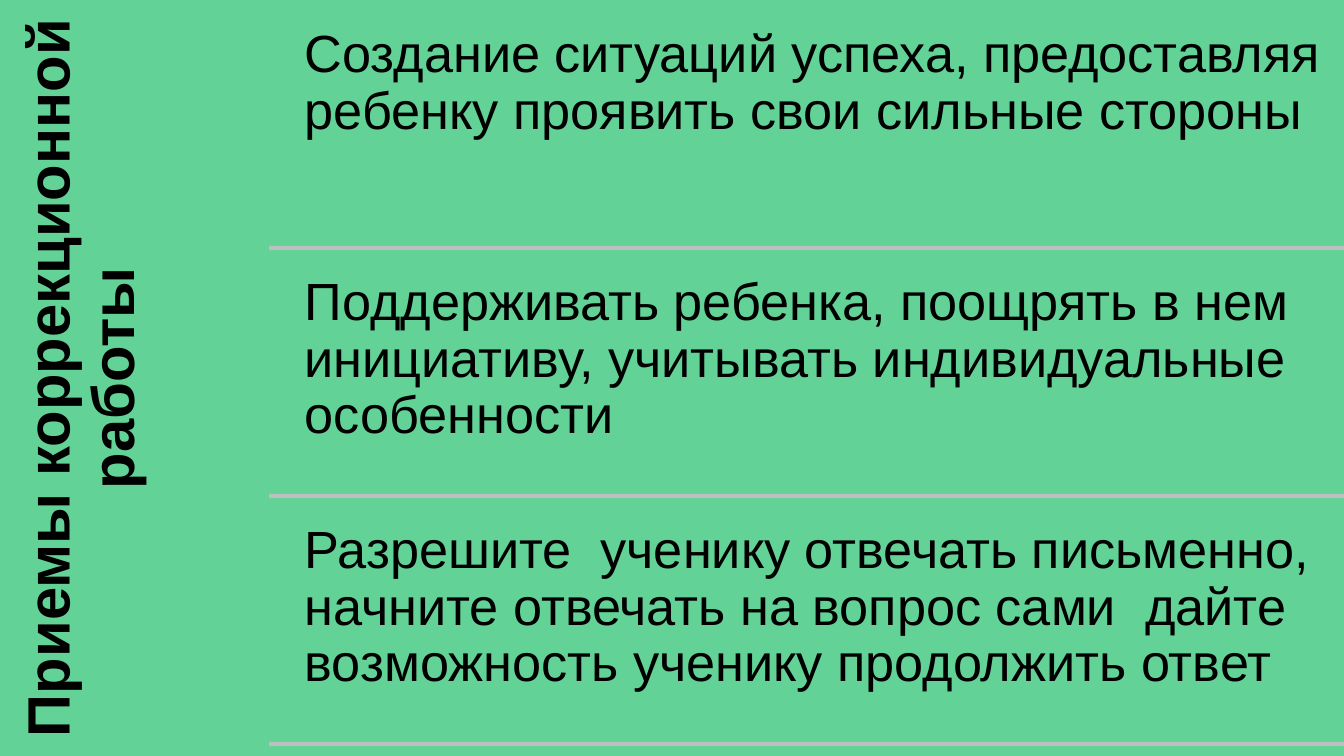
from lxml.etree import SubElement
from pptx import Presentation
from pptx.dml.color import RGBColor
from pptx.enum.shapes import MSO_CONNECTOR
from pptx.enum.text import MSO_ANCHOR, MSO_AUTO_SIZE, PP_ALIGN
from pptx.oxml.ns import qn
from pptx.util import Cm, Pt

COLORS = {"background": "63D297", "text": "000000", "divider": "BFBFC1"}
FONT = "Arial"
SLIDE_WIDTH, SLIDE_HEIGHT = 25.4, 14.29
TITLE_WIDTH = 5.08
TITLE = "Приемы коррекционной работы"
TECHNIQUES = [
    "Создание ситуаций успеха, предоставляя ребенку проявить свои сильные стороны",
    "Поддерживать ребенка, поощрять в нем инициативу, учитывать индивидуальные особенности",
    "Разрешите  ученику отвечать письменно, начните отвечать на вопрос сами  "
    "дайте возможность ученику продолжить ответ",
]


def color(name):
    """Return the named colour of the palette."""
    return RGBColor.from_string(COLORS[name])


def write_text(frame, text, size, margin, bold=False, align=PP_ALIGN.LEFT):
    """Fill a text frame with one top-anchored paragraph."""
    frame.text = text
    frame.word_wrap = True
    frame.auto_size = MSO_AUTO_SIZE.NONE
    frame.vertical_anchor = MSO_ANCHOR.TOP
    frame.margin_left = frame.margin_right = Cm(margin)
    frame.margin_top = frame.margin_bottom = Cm(margin)
    paragraph = frame.paragraphs[0]
    paragraph.alignment = align
    paragraph.line_spacing = 0.9
    paragraph.font.name = FONT
    paragraph.font.size = Pt(size)
    paragraph.font.bold = bold
    paragraph.font.color.rgb = color("text")


def place_title(slide, left, top, width, height):
    """Turn the title a quarter left so that it fills the given upright box."""
    title = slide.shapes.title
    title.left = Cm(left + (width - height) / 2)
    title.top = Cm(top + (height - width) / 2)
    title.width, title.height = Cm(height), Cm(width)
    title.rotation = 270
    write_text(title.text_frame, TITLE, 32, 0.34, True, PP_ALIGN.CENTER)


def place_divider(slide, left, top, width):
    """Draw a horizontal divider without a shadow."""
    divider = slide.shapes.add_connector(
        MSO_CONNECTOR.STRAIGHT, Cm(left), Cm(top), Cm(left + width), Cm(top)
    )
    divider.line.color.rgb = color("divider")
    divider.line.width = Pt(2)
    SubElement(divider._element.spPr, qn("a:effectLst"))


def place_techniques(slide, left, top, width, height):
    """Stack the techniques in equal rows, each closed by a divider."""
    indent, gap = 0.38, 0.22
    pitch = height / len(TECHNIQUES)
    for row, technique in enumerate(TECHNIQUES):
        row_top = top + row * pitch
        box = slide.shapes.add_textbox(
            Cm(left + indent), Cm(row_top + gap), Cm(width - indent), Cm(pitch - gap)
        )
        write_text(box.text_frame, technique, 28, 0.3)
        place_divider(slide, left, row_top + pitch, width)


def main():
    """Build and save the slide."""
    presentation = Presentation()
    presentation.slide_width = Cm(SLIDE_WIDTH)
    presentation.slide_height = Cm(SLIDE_HEIGHT)
    slide = presentation.slides.add_slide(presentation.slide_layouts[5])
    slide.background.fill.solid()
    slide.background.fill.fore_color.rgb = color("background")
    place_title(slide, 0, 0, TITLE_WIDTH, SLIDE_HEIGHT)
    place_techniques(slide, TITLE_WIDTH, 0, SLIDE_WIDTH - TITLE_WIDTH, 14.06)
    presentation.save("out.pptx")


if __name__ == "__main__":
    main()
